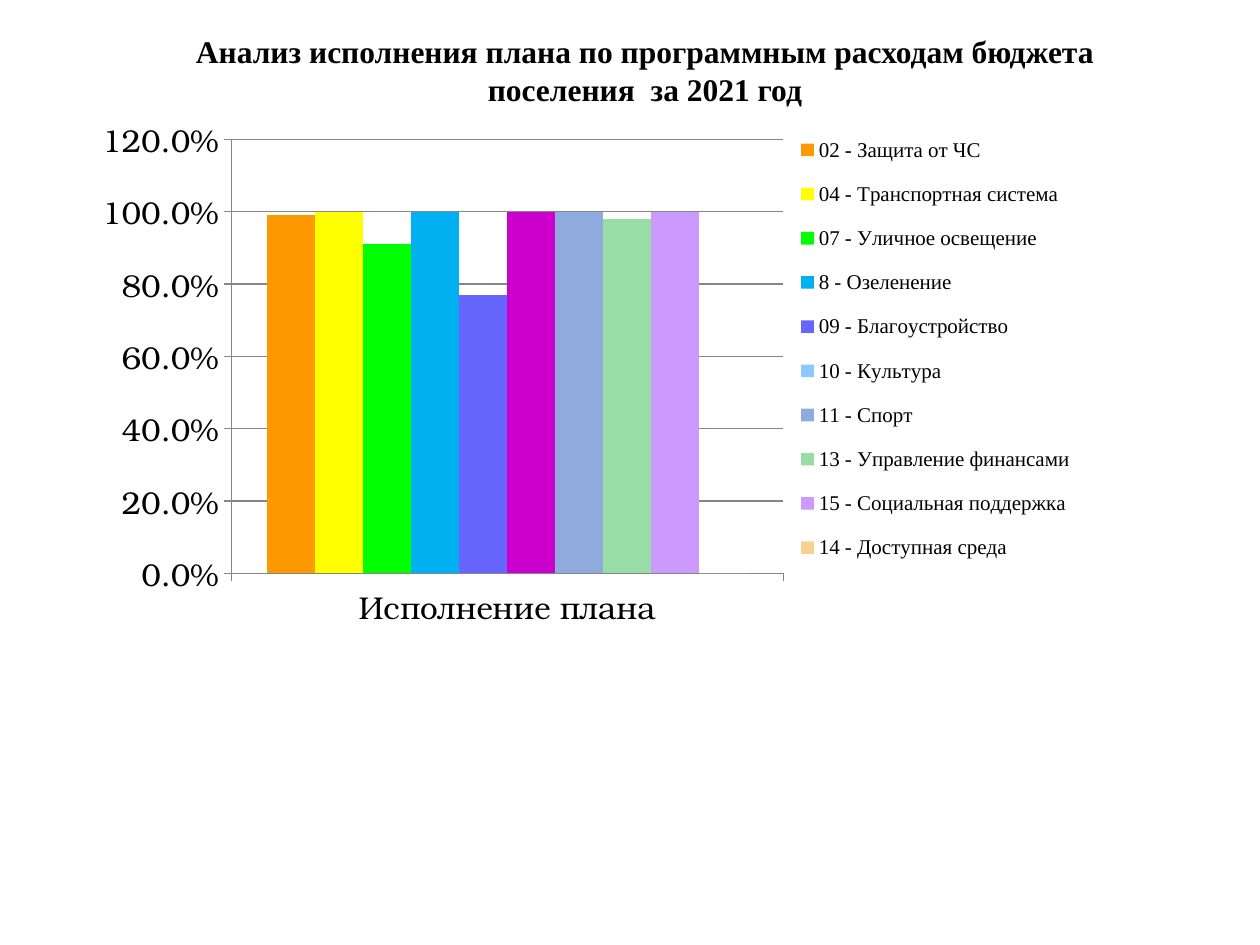
from dataclasses import dataclass

from lxml.etree import SubElement
from pptx import Presentation
from pptx.chart.data import CategoryChartData
from pptx.dml.color import RGBColor
from pptx.enum.chart import XL_CHART_TYPE, XL_LEGEND_POSITION, XL_TICK_MARK
from pptx.enum.text import MSO_AUTO_SIZE, PP_ALIGN
from pptx.oxml.ns import qn
from pptx.util import Pt


@dataclass(frozen=True)
class Theme:
    text: str = "000000"
    axis: str = "868686"
    heading_font: str = "Times New Roman"
    chart_font: str = "TeX Gyre Bonum"
    large: int = 18
    small: int = 12


THEME = Theme()
CATEGORY = "Исполнение плана"
PROGRAMMES = [
    ("02 - Защита от ЧС", 0.99, "FF9900"),
    ("04 - Транспортная система", 1, "FFFF00"),
    ("07 - Уличное освещение", 0.91, "00FF00"),
    ("8 - Озеленение", 1, "00B0F0"),
    ("09 - Благоустройство", 0.77, "6666FF"),
    ("10 - Культура", 1, "8BCAFF"),
    ("11 - Спорт", 1, "8FABDD"),
    ("13 - Управление финансами", 0.98, "98DDA6"),
    ("15 - Социальная поддержка", 1, "CC99FF"),
    ("14 - Доступная среда", 0, "F8D08F"),
]
POINT_COLOURS = {"10 - Культура": "CC00CC"}


def style_font(font, name, size, bold=False):
    font.name = name
    font.size = Pt(size)
    font.bold = bold
    font.color.rgb = RGBColor.from_string(THEME.text)


def paint(fill, colour):
    fill.solid()
    fill.fore_color.rgb = RGBColor.from_string(colour)


def set_layout(parent, position, box, inner=False):
    """Fix a chart part at box: left, top, width, height as chart fractions."""
    for old_layout in parent.findall(qn("c:layout")):
        parent.remove(old_layout)
    layout = SubElement(parent, qn("c:layout"))
    parent.insert(position, layout)
    manual = SubElement(layout, qn("c:manualLayout"))
    settings = [("xMode", "edge"), ("yMode", "edge"), *zip("xywh", box)]
    if inner:
        settings.insert(0, ("layoutTarget", "inner"))
    for tag, value in settings:
        SubElement(manual, qn(f"c:{tag}")).set("val", str(value))


def add_title(slide, left, top, width, height):
    title = slide.shapes.add_textbox(left, top, width, height)
    frame = title.text_frame
    frame.word_wrap = True
    frame.auto_size = MSO_AUTO_SIZE.SHAPE_TO_FIT_TEXT
    paragraph = frame.paragraphs[0]
    paragraph.alignment = PP_ALIGN.CENTER
    run = paragraph.add_run()
    run.text = ("Анализ исполнения плана по программным расходам бюджета "
                "поселения  за 2021 год")
    style_font(run.font, THEME.heading_font, THEME.large, bold=True)


def style_axes(chart):
    value_axis = chart.value_axis
    value_axis.minimum_scale = 0
    value_axis.maximum_scale = 1.2
    value_axis.major_unit = 0.2
    value_axis.has_major_gridlines = True
    value_axis.tick_labels.number_format = "0.0%"
    value_axis.tick_labels.number_format_is_linked = False
    for axis in (value_axis, chart.category_axis):
        axis.major_tick_mark = XL_TICK_MARK.OUTSIDE
        axis.minor_tick_mark = XL_TICK_MARK.NONE
    for part in (value_axis, chart.category_axis, value_axis.major_gridlines):
        part.format.line.width = Pt(0.75)
        part.format.line.color.rgb = RGBColor.from_string(THEME.axis)


def style_legend(chart):
    chart.has_legend = True
    legend = chart.legend
    legend.position = XL_LEGEND_POSITION.RIGHT
    legend.include_in_layout = False
    style_font(legend.font, THEME.heading_font, THEME.small)
    set_layout(legend._element, 1, (0.64, 0.003, 0.256, 0.82))


def add_programme_chart(slide, left, top, width, height):
    data = CategoryChartData(number_format="0.0%")
    data.categories = [CATEGORY]
    for name, value, _ in PROGRAMMES:
        data.add_series(name, [value])
    chart = slide.shapes.add_chart(
        XL_CHART_TYPE.COLUMN_CLUSTERED, left, top, width, height, data).chart
    chart.has_title = False
    style_font(chart.font, THEME.chart_font, THEME.large)
    plot = chart.plots[0]
    plot.vary_by_categories = False
    plot.gap_width = 150
    plot.overlap = 0
    for series, (name, _, colour) in zip(plot.series, PROGRAMMES):
        paint(series.format.fill, colour)
        if name in POINT_COLOURS:
            paint(series.points[0].format.fill, POINT_COLOURS[name])
    style_axes(chart)
    style_legend(chart)
    plot_area = chart._chartSpace.chart.plotArea
    set_layout(plot_area, 0, (0.134, 0.043, 0.497, 0.767), inner=True)


def main():
    presentation = Presentation()
    presentation.slide_width = Pt(720)
    presentation.slide_height = Pt(540)
    slide = presentation.slides.add_slide(presentation.slide_layouts[6])
    add_title(slide, Pt(93.6), Pt(14.8), Pt(550), Pt(51))
    add_programme_chart(slide, Pt(47), Pt(65.8), Pt(635), Pt(323.3))
    presentation.save("out.pptx")


if __name__ == "__main__":
    main()
